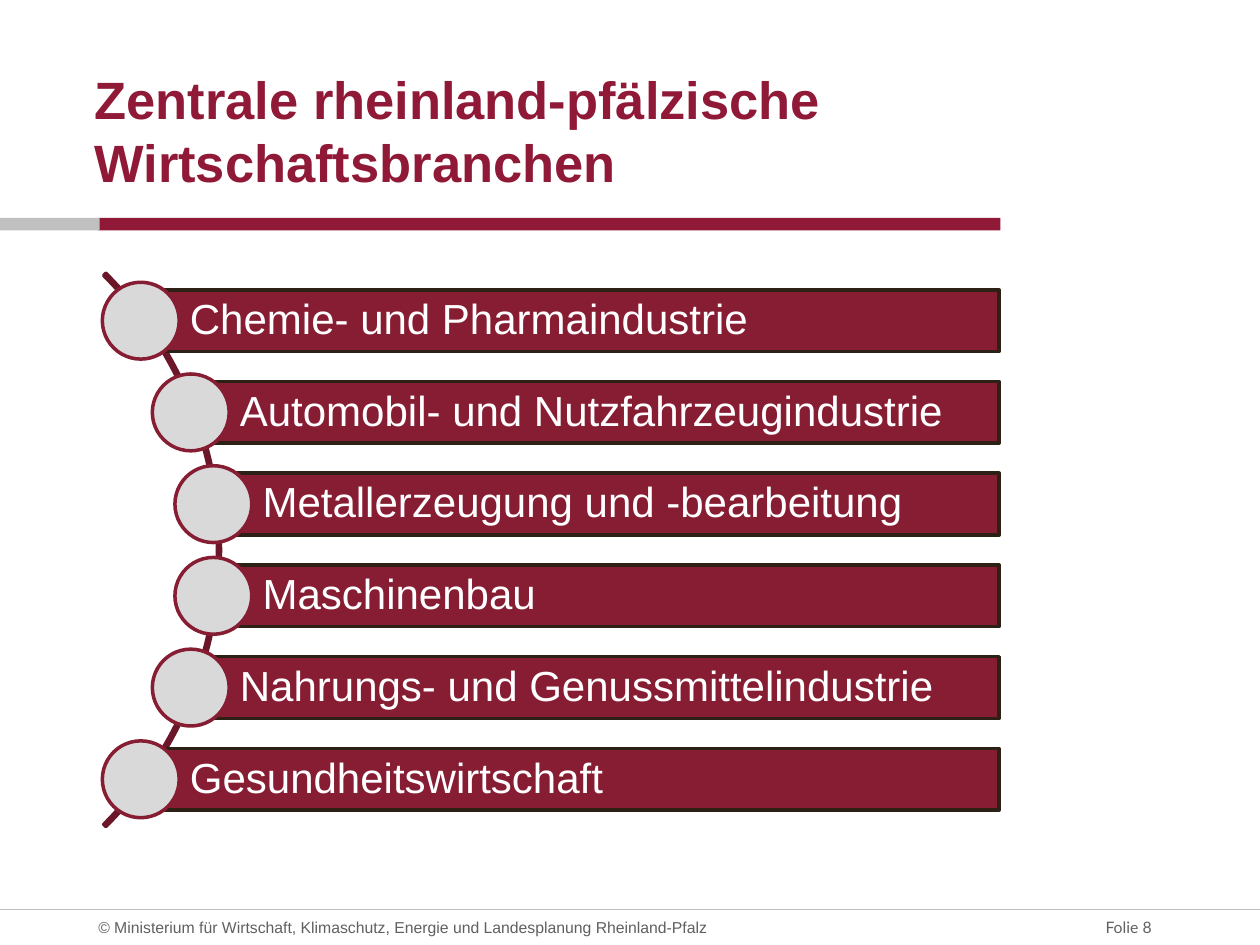
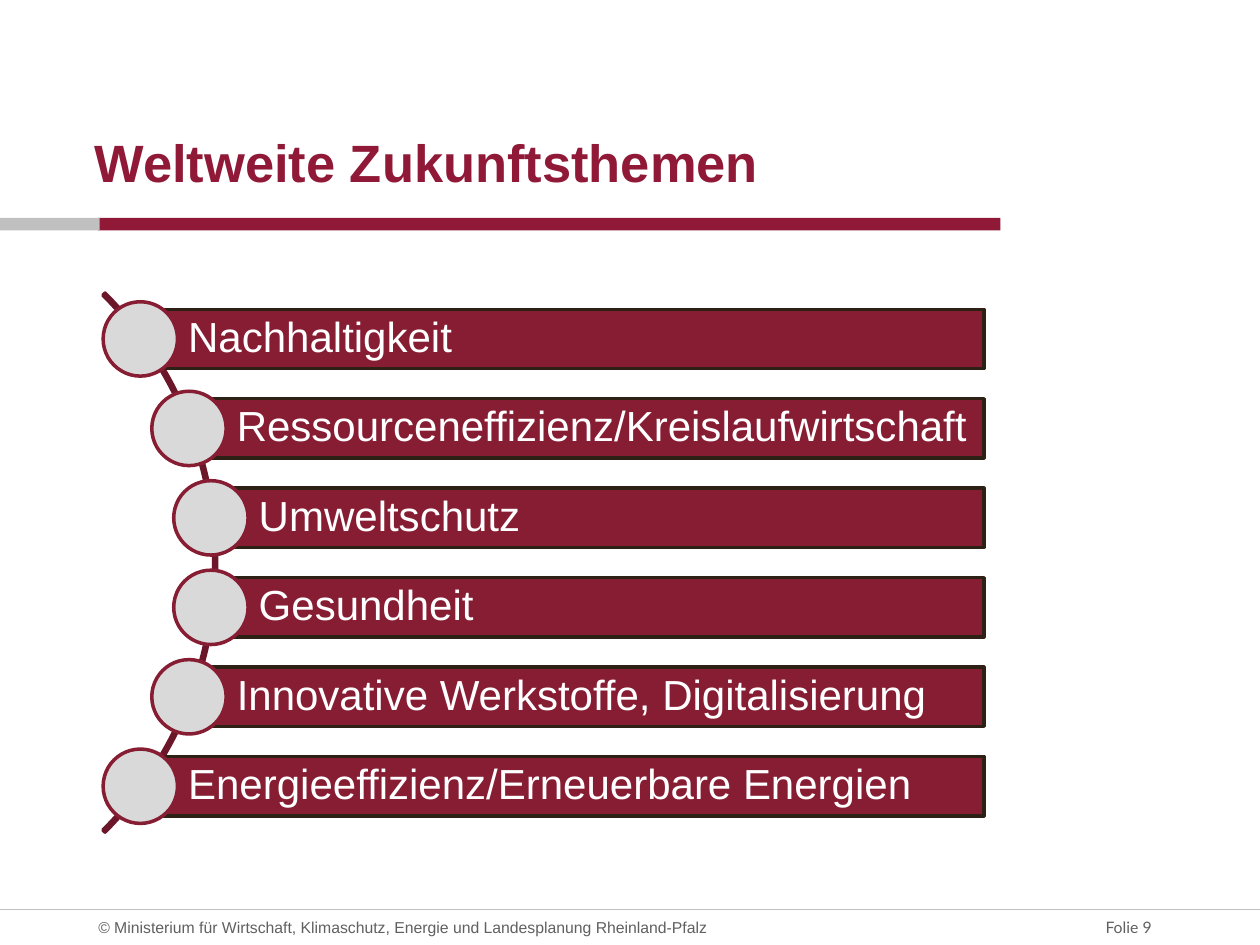
from math import sqrt

from lxml import etree
from pptx import Presentation
from pptx.dml.color import RGBColor
from pptx.enum import shapes, text
from pptx.util import Inches, Pt

# Content; lengths in inches
SLIDES = [
    {
        "title": "Zentrale rheinland-pfälzische Wirtschaftsbranchen",
        "number": 8,
        "topics": ["Chemie- und Pharmaindustrie", "Automobil- und Nutzfahrzeugindustrie",
                   "Metallerzeugung und -bearbeitung", "Maschinenbau",
                   "Nahrungs- und Genussmittelindustrie", "Gesundheitswirtschaft"],
        "arc": (-4.46, 1.26, 6.21), "node_radius": 3.07, "step": 0.728,
        "bar_right": 7.93, "bar_height": 0.49, "dot": 0.61, "indent": 0.39,
    },
    {
        "title": "Weltweite Zukunftsthemen",
        "number": 9,
        "topics": ["Nachhaltigkeit", "Ressourceneffizienz/Kreislaufwirtschaft",
                   "Umweltschutz", "Gesundheit",
                   "Innovative Werkstoffe, Digitalisierung",
                   "Energieeffizienz/Erneuerbare Energien"],
        "arc": (-4.33, 1.44, 6.05), "node_radius": 3.0, "step": 0.71,
        "bar_right": 7.81, "bar_height": 0.47, "dot": 0.59, "indent": 0.38,
    },
]
FOOTER = ("© Ministerium für Wirtschaft, Klimaschutz, Energie und "
          "Landesplanung Rheinland-Pfalz")

# Shared colours
RED, SILVER, GREY = "8F1936", "C0C0C0", "606060"
BAR, BAR_EDGE, ARC, DOT, WHITE = "871D33", "2D2015", "6C1729", "D9D9D9", "FFFFFF"


def color(value):
    return RGBColor.from_string(value)


def add_shape(slide, kind, left, top, width, height, fill=None, line=None):
    shape = slide.shapes.add_shape(kind, *map(Inches, (left, top, width, height)))
    shape.shadow.inherit = False
    if fill:
        shape.fill.solid()
        shape.fill.fore_color.rgb = color(fill)
    else:
        shape.fill.background()
    if line:
        shape.line.color.rgb = color(line)
        shape.line.width = Pt(2)
    else:
        shape.line.fill.background()
    return shape


def write(shape, content, size, ink, font="Arial", bold=False, spacing=None,
          align=text.PP_ALIGN.LEFT, anchor=text.MSO_ANCHOR.MIDDLE, insets=(0, 0, 0, 0)):
    frame = shape.text_frame
    frame.word_wrap = True
    frame.vertical_anchor = anchor
    (frame.margin_left, frame.margin_top,
     frame.margin_right, frame.margin_bottom) = map(Inches, insets)
    paragraph = frame.paragraphs[0]
    paragraph.text = content
    paragraph.alignment = align
    if spacing:
        paragraph.line_spacing = spacing
    paragraph.font.name = font
    paragraph.font.size = Pt(size)
    paragraph.font.bold = bold
    paragraph.font.color.rgb = color(ink)


def add_text(slide, left, top, width, height, content, **style):
    box = slide.shapes.add_textbox(*map(Inches, (left, top, width, height)))
    write(box, content, **style)


def add_frame(slide, title, number):
    # Band below the title
    rectangle = shapes.MSO_SHAPE.RECTANGLE
    add_shape(slide, rectangle, 0.78, 1.73, 7.16, 0.1, RED)
    add_shape(slide, rectangle, 0, 1.73, 0.79, 0.1, SILVER)

    # Footer
    rule = slide.shapes.add_connector(shapes.MSO_CONNECTOR.STRAIGHT, 0, Inches(7.22),
                                      Inches(10), Inches(7.22))
    rule.line.color.rgb = color(SILVER)
    rule.line.width = Pt(0.75)
    properties = rule._element.spPr
    etree.SubElement(properties, "{%s}effectLst" % properties.nsmap["a"])
    add_text(slide, 7.94, 7.22, 1.27, 0.28, f"Folie {number}", size=9, ink=GREY,
             font="Lato", align=text.PP_ALIGN.RIGHT, insets=(0, 0, 0.07, 0))
    add_text(slide, 0.78, 7.22, 5.51, 0.28, FOOTER, size=9, ink=GREY)

    # Title
    add_text(slide, 0.75, 0.52, 6.39, 1.01, title, size=30, ink=RED, bold=True,
             anchor=text.MSO_ANCHOR.BOTTOM)


def add_topic_list(slide, data):
    # Arc from 315 to 45 degrees
    left, top, diameter = data["arc"]
    arc = add_shape(slide, shapes.MSO_SHAPE.BLOCK_ARC, left, top, diameter, diameter, line=ARC)
    for index, value in enumerate((189, 27, 0.004)):
        arc.adjustments[index] = value

    # Each bar starts on the arc, at the centre of its dot
    center_x, center_y = left + diameter / 2, top + diameter / 2
    height, dot = data["bar_height"], data["dot"]
    middle = (len(data["topics"]) - 1) / 2
    for row, topic in enumerate(data["topics"]):
        offset = (row - middle) * data["step"]
        x = center_x + sqrt(data["node_radius"] ** 2 - offset ** 2)
        y = center_y + offset
        bar = add_shape(slide, shapes.MSO_SHAPE.RECTANGLE, x, y - height / 2,
                        data["bar_right"] - x, height, BAR, BAR_EDGE)
        write(bar, topic, size=24, ink=WHITE, spacing=0.9,
              insets=(data["indent"], 0.07, 0.07, 0.07))
        add_shape(slide, shapes.MSO_SHAPE.OVAL, x - dot / 2, y - dot / 2, dot, dot, DOT, BAR)


def main():
    presentation = Presentation()
    presentation.slide_width, presentation.slide_height = Inches(10), Inches(7.5)
    for data in SLIDES:
        slide = presentation.slides.add_slide(presentation.slide_layouts[6])
        add_frame(slide, data["title"], data["number"])
        add_topic_list(slide, data)
    presentation.save("out.pptx")


if __name__ == "__main__":
    main()
